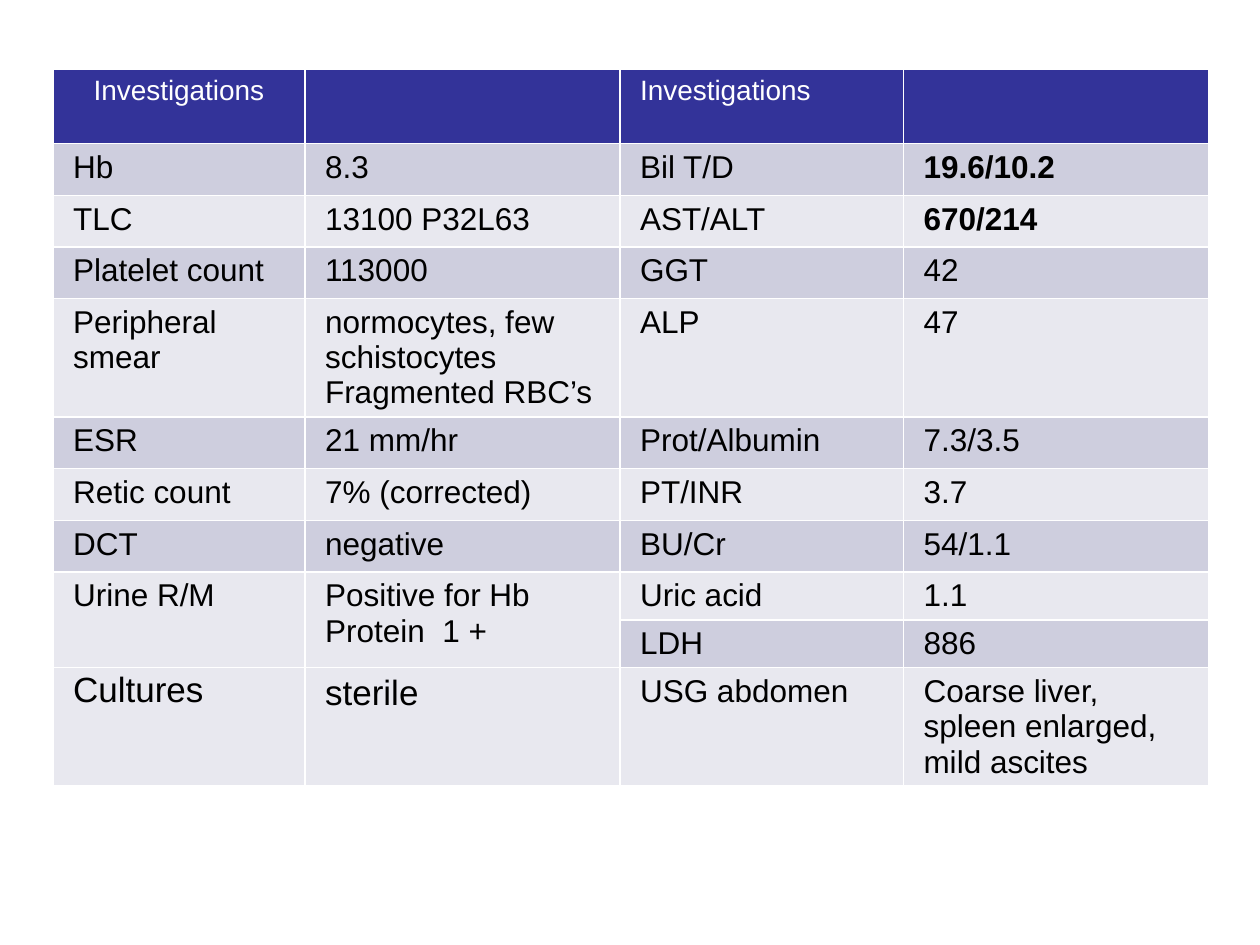
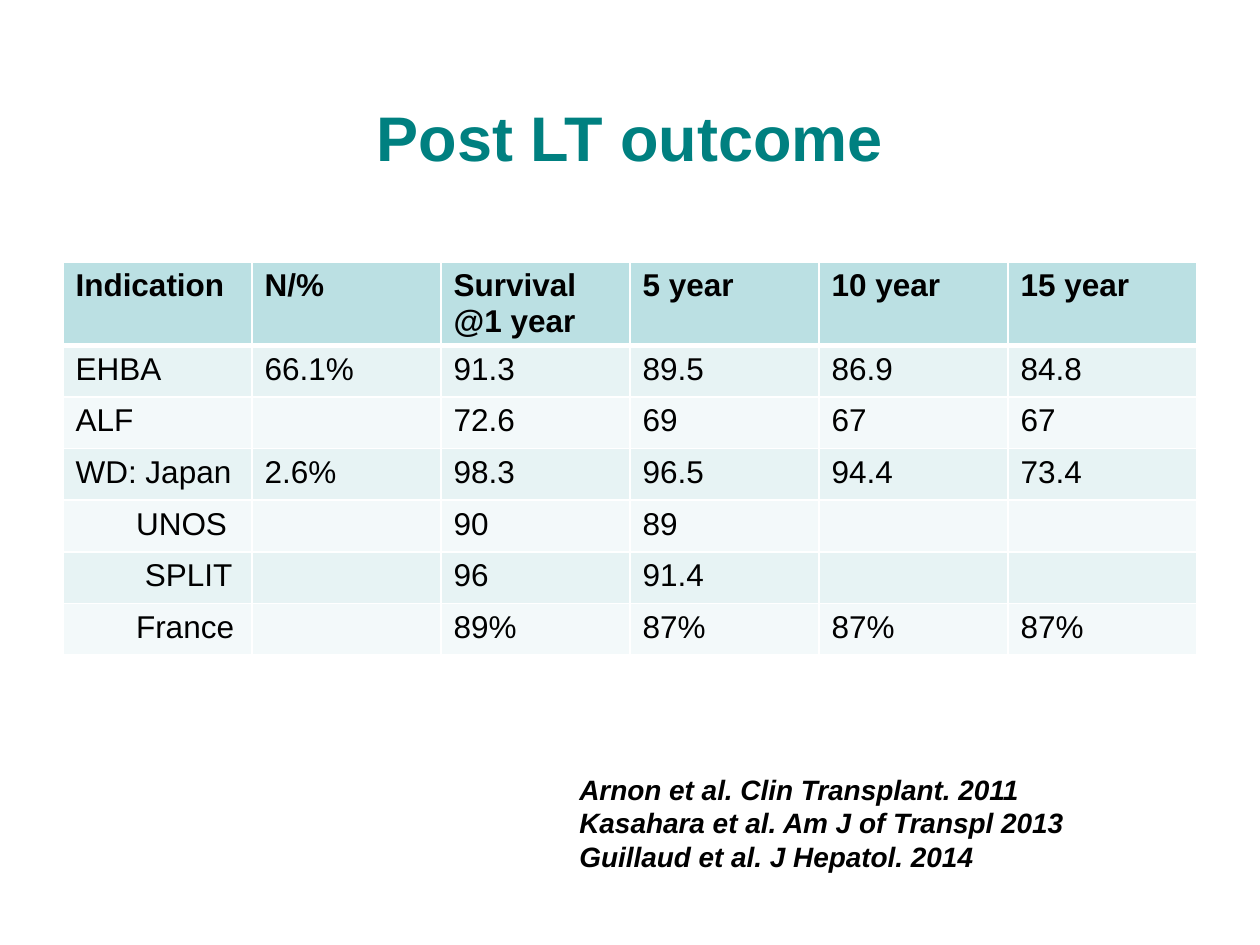
from lxml.etree import SubElement
from pptx import Presentation
from pptx.dml.color import RGBColor
from pptx.enum.text import MSO_ANCHOR, PP_ALIGN
from pptx.oxml.ns import qn
from pptx.util import Inches, Pt

FONT = "Arial"
WHITE = RGBColor(0xFF, 0xFF, 0xFF)
BLACK = RGBColor(0, 0, 0)
TEAL = RGBColor(0x00, 0x80, 0x80)
NAVY = RGBColor(0x33, 0x33, 0x99)
LILAC = RGBColor(0xCE, 0xCE, 0xDE)
MIST = RGBColor(0xE8, 0xE8, 0xEF)
AQUA = RGBColor(0xBB, 0xE0, 0xE3)
FOAM = RGBColor(0xE7, 0xF3, 0xF4)
PALE = RGBColor(0xF3, 0xF9, 0xFA)

LABS = [
    ["Investigations", "", "Investigations", ""],
    ["Hb", "8.3", "Bil T/D", "19.6/10.2"],
    ["TLC", "13100 P32L63", "AST/ALT", "670/214"],
    ["Platelet count", "113000", "GGT", "42"],
    ["Peripheral smear", "normocytes, few schistocytes Fragmented RBC’s", "ALP", "47"],
    ["ESR", "21 mm/hr", "Prot/Albumin", "7.3/3.5"],
    ["Retic count", "7% (corrected)", "PT/INR", "3.7"],
    ["DCT", "negative", "BU/Cr", "54/1.1"],
    ["Urine R/M", "Positive for Hb\nProtein  1 +", "Uric acid", "1.1"],
    ["", "", "LDH", "886"],
    ["Cultures", "sterile", "USG abdomen", "Coarse liver, spleen enlarged, mild ascites"],
]
RATES = [
    ["Indication", "N/%", "Survival @1 year", "5 year", "10 year", "15 year"],
    ["EHBA", "66.1%", "91.3", "89.5", "86.9", "84.8"],
    ["ALF", "", "72.6", "69", "67", "67"],
    ["WD: Japan", "2.6%", "98.3", "96.5", "94.4", "73.4"],
    ["UNOS", "", "90", "89", "", ""],
    ["SPLIT", "", "96", "91.4", "", ""],
    ["France", "", "89%", "87%", "87%", "87%"],
]
CITES = "Arnon et al. Clin Transplant. 2011\nKasahara et al. Am J of Transpl 2013\nGuillaud et al. J Hepatol. 2014"


def put(frame, text, size=18, color=BLACK, bold=False, italic=False,
        align=PP_ALIGN.LEFT, lead=None):
    frame.word_wrap = True
    frame.text = text
    for para in frame.paragraphs:
        para.alignment = align
        if lead:
            para.line_spacing = lead
        font = para.font
        font.name, font.size = FONT, Pt(size)
        font.bold, font.italic = bold, italic
        font.color.rgb = color


def edge(cell, top=1, base=1):
    props = cell._tc.get_or_add_tcPr()
    for side, width in (("L", 1), ("R", 1), ("T", top), ("B", base)):
        line = SubElement(props, qn(f"a:ln{side}"), w=str(Pt(width)))
        fill = SubElement(line, qn("a:solidFill"))
        SubElement(fill, qn("a:srgbClr"), val=str(WHITE))


def grid(slide, box, data, cols, rows, fills, rule, pad, style):
    shape = slide.shapes.add_table(len(rows), len(cols), *map(Inches, box))
    table = shape.table
    table.horz_banding = False
    for col, width in zip(table.columns, cols):
        col.width = Inches(width)
    for row, high in zip(table.rows, rows):
        row.height = Inches(high)
    head, odd, even = fills
    for r, line in enumerate(data):
        for c, text in enumerate(line):
            cell = table.cell(r, c)
            edge(cell, rule if r == 1 else 1, rule if r == 0 else 1)
            cell.fill.solid()
            cell.fill.fore_color.rgb = head if r == 0 else odd if r % 2 else even
            cell.margin_left = cell.margin_right = Inches(pad)
            put(cell.text_frame, text, **style(r, c))
    return table


def lab_style(r, c):
    if r == 0:
        return dict(size=16, color=WHITE,
                    align=PP_ALIGN.CENTER if c == 0 else PP_ALIGN.LEFT)
    if r == 10 and c < 2:
        return dict(size=20, lead=0.9 if c == 0 else None)
    return dict(bold=c == 3 and r < 3)


def lab_slide(deck):
    slide = deck.slides.add_slide(deck.slide_layouts[6])
    rows = [0.59] + [0.41] * 3 + [0.93] + [0.41] * 3 + [0.38] * 2 + [0.93]
    table = grid(slide, (0.42, 0.55, 9.17, sum(rows)), LABS, [2, 2.5, 2.25, 2.42],
                 rows, (NAVY, LILAC, MIST), 1, 0.16, lab_style)
    for c in range(2):
        table.cell(8, c).merge(table.cell(9, c))


def rate_slide(deck):
    slide = deck.slides.add_slide(deck.slide_layouts[5])
    title = slide.shapes.title
    title.left, title.top, title.width, title.height = map(Inches, (0.5, 0.5, 9, 1.17))
    title.text_frame.vertical_anchor = MSO_ANCHOR.MIDDLE
    put(title.text_frame, "Post LT outcome", size=36, color=TEAL, bold=True,
        align=PP_ALIGN.CENTER)
    rows = [0.66] + [0.41] * 6
    table = grid(slide, (0.5, 2.08, 9, sum(rows)), RATES, [1.5] * 6, rows,
                 (AQUA, FOAM, PALE), 3, 0.1, lambda r, c: dict(bold=r == 0))
    for r, inset in ((4, 0.58), (5, 0.65), (6, 0.58)):
        cell = table.cell(r, 0)
        cell.margin_left, cell.margin_right = Inches(inset), Inches(0.05)
    note = slide.shapes.add_textbox(*map(Inches, (4.5, 6.08, 5.26, 0.91)))
    put(note.text_frame, CITES, size=16, bold=True, italic=True)


def main():
    deck = Presentation()
    deck.slide_width, deck.slide_height = Inches(10), Inches(7.5)
    lab_slide(deck)
    rate_slide(deck)
    deck.save("out.pptx")


if __name__ == "__main__":
    main()
